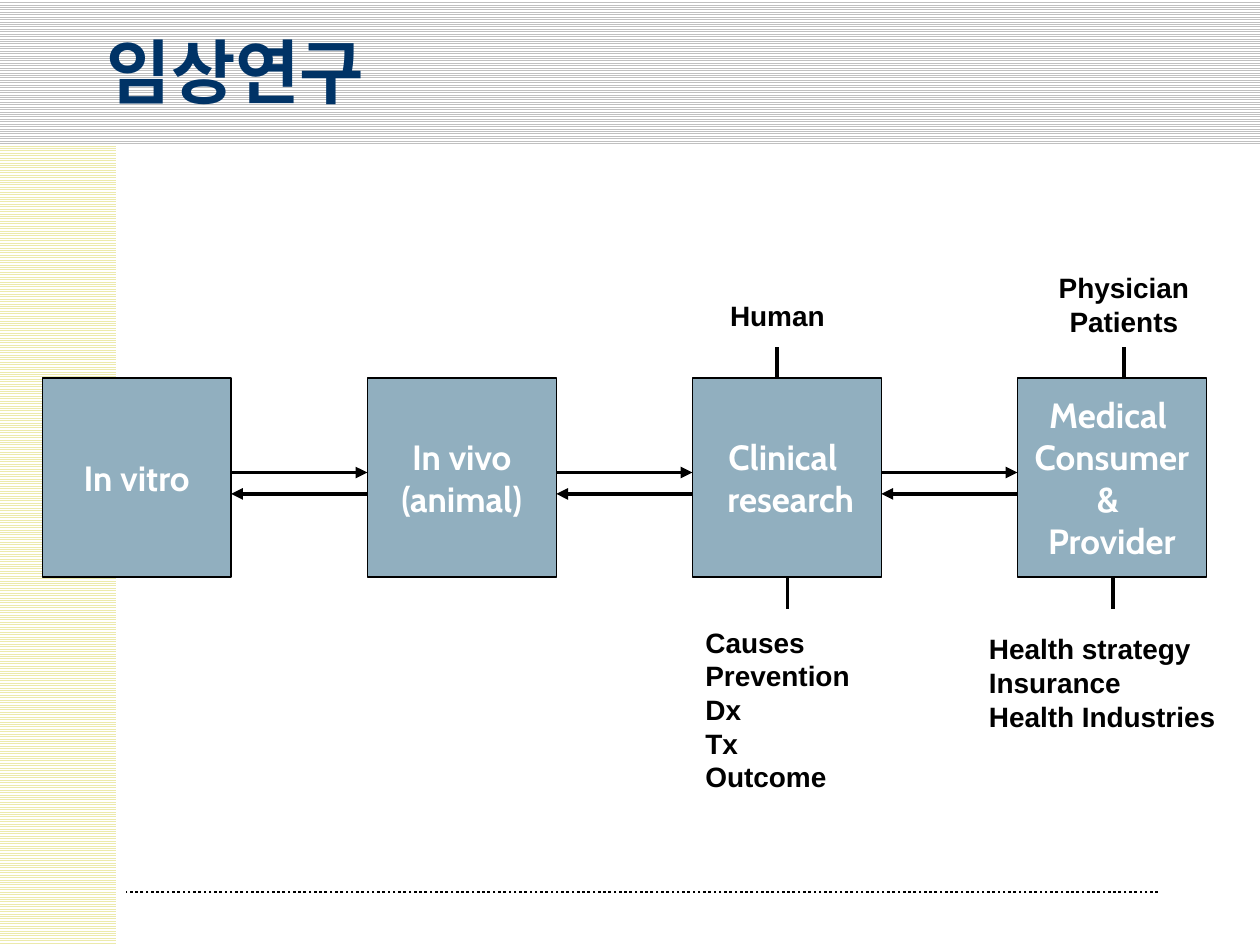
import pptx
import pptx.util
import pptx.dml.color
import pptx.enum.dml
import pptx.enum.shapes
import pptx.enum.text
import pptx.oxml.ns
import lxml.etree

Inches = pptx.util.Inches
Align = pptx.enum.text.PP_ALIGN
Anchor = pptx.enum.text.MSO_ANCHOR
RECTANGLE = pptx.enum.shapes.MSO_SHAPE.RECTANGLE
BLACK, WHITE, NAVY, STEEL = "000000", "FFFFFF", "003366", "91AFBF"

STAGES = [
    ["In vitro"],
    ["In vivo", "(animal)"],
    ["Clinical ", " research"],
    ["Medical ", "Consumer", "& ", "Provider"],
]
STAGE_WIDTH, STAGE_HEIGHT = 1.5, 1.58
STAGE_GAP = 1.08
STEM = 0.25


def color(hex_string):
    return pptx.dml.color.RGBColor.from_string(hex_string)


def add_child(parent, tag, **attributes):
    child = lxml.etree.SubElement(parent, pptx.oxml.ns.qn(tag))
    for name, value in attributes.items():
        child.set(name, value)
    return child


def write_text(shape, lines, size, font, hex_color=BLACK, align=Align.LEFT,
               anchor=Anchor.MIDDLE, wrap=False):
    frame = shape.text_frame
    frame.word_wrap = wrap
    frame.vertical_anchor = anchor
    for index, line in enumerate(lines):
        para = frame.add_paragraph() if index else frame.paragraphs[0]
        para.alignment = align
        span = para.add_run()
        span.text = line
        span.font.size = pptx.util.Pt(size)
        span.font.bold = True
        span.font.name = font
        span.font.color.rgb = color(hex_color)
        add_child(span.font._element, "a:ea", typeface=font)


def add_text(page, box, lines, **text_format):
    shape = page.shapes.add_textbox(*map(Inches, box))
    write_text(shape, lines, **text_format)


def add_line(page, start, end, width=2.25, dash=None, arrow=False):
    line = page.shapes.add_connector(
        pptx.enum.shapes.MSO_CONNECTOR.STRAIGHT, *map(Inches, start + end))
    line.line.color.rgb = color(BLACK)
    line.line.width = pptx.util.Pt(width)
    if dash:
        line.line.dash_style = dash
    if arrow:
        add_child(line.line._get_or_add_ln(), "a:tailEnd", type="triangle")
    add_child(line._element.spPr, "a:effectLst")


def add_striped_band(page, box, stripe):
    band = page.shapes.add_shape(RECTANGLE, *map(Inches, box))
    band.shadow.inherit = False
    band.fill.patterned()
    band.fill.pattern = pptx.enum.dml.MSO_PATTERN.LIGHT_HORIZONTAL
    band.fill.fore_color.rgb = color(stripe)
    band.fill.back_color.rgb = color(WHITE)
    band.line.fill.background()


def add_background(page, width, height):
    add_striped_band(page, (0, 0, 0.92, height), "ECEAAC")
    add_line(page, (9.19, 7.08), (1, 7.08), width=1.5,
             dash=pptx.enum.dml.MSO_LINE.ROUND_DOT)
    add_striped_band(page, (0, 0, width, 1.15), "C0C0C0")


def add_stage(page, left, top, lines):
    stage = page.shapes.add_shape(
        RECTANGLE, *map(Inches, (left, top, STAGE_WIDTH, STAGE_HEIGHT)))
    stage.shadow.inherit = False
    stage.fill.solid()
    stage.fill.fore_color.rgb = color(STEEL)
    stage.line.color.rgb = color(BLACK)
    stage.line.width = pptx.util.Pt(0.75)
    write_text(stage, lines, size=20, font="Cabin", hex_color=WHITE,
               align=Align.CENTER)


def add_flow(page, left, top):
    """Place the row of stages with a pair of opposed arrows in each gap."""
    for index, lines in enumerate(STAGES):
        stage_left = left + index * (STAGE_WIDTH + STAGE_GAP)
        add_stage(page, stage_left, top, lines)
        if index:
            previous_right = stage_left - STAGE_GAP
            forward, back = top + 0.75, top + 0.92
            add_line(page, (previous_right, forward), (stage_left, forward),
                     arrow=True)
            add_line(page, (stage_left, back), (previous_right, back),
                     arrow=True)


def add_note(page, box, lines, stem_x, stem_top, align):
    """Place a label and the short vertical stem that ties it to a stage."""
    add_text(page, box, lines, size=16, font="Arial", align=align)
    add_line(page, (stem_x, stem_top + STEM), (stem_x, stem_top))


def main():
    deck = pptx.Presentation()
    deck.slide_width, deck.slide_height = Inches(10), Inches(7.5)
    page = deck.slides.add_slide(deck.slide_layouts[6])

    add_background(page, 10, 7.5)
    add_text(page, (0.75, 0.36, 8.5, 0.58), ["임상연구"], size=40,
             font="Noto Sans CJK KR", hex_color=NAVY, anchor=Anchor.BOTTOM,
             wrap=True)

    top = 3
    add_flow(page, 0.335, top)
    above, below = top - STEM, top + STAGE_HEIGHT
    add_note(page, (5.42, 2.17, 1.5, 0.67), ["Human"],
             6.17, above, Align.CENTER)
    add_note(page, (8.17, 2.08, 1.5, 0.67), ["Physician", "Patients"],
             8.92, above, Align.CENTER)
    add_note(page, (5.5, 4.92, 1.58, 1.42),
             ["Causes", "Prevention", "Dx", "Tx", "Outcome"],
             6.25, below, Align.LEFT)
    add_note(page, (7.75, 5, 2.08, 0.83),
             ["Health strategy", "Insurance", "Health Industries"],
             8.83, below, Align.LEFT)

    deck.save("out.pptx")


if __name__ == "__main__":
    main()
